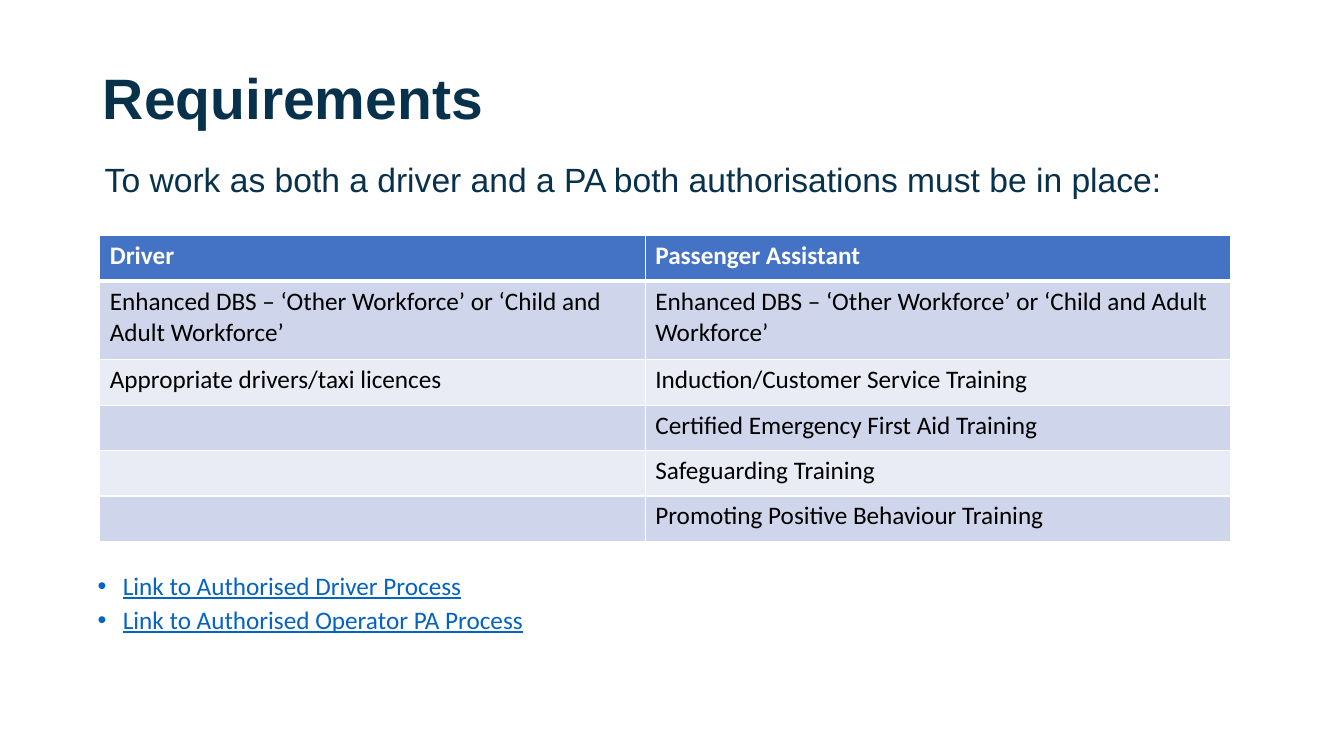
from dataclasses import dataclass

import pptx
import pptx.dml.color
import pptx.enum.text
import pptx.oxml
import pptx.oxml.ns
import pptx.util
from pptx.util import Inches


@dataclass(frozen=True)
class Theme:
    navy: str = "08314C"
    header: str = "4472C4"
    bands: tuple[str, str] = ("CFD5EA", "E9EBF5")
    white: str = "FFFFFF"
    black: str = "000000"
    link: str = "0563C1"
    heading_font: str = "Arial"
    body_font: str = "Calibri"
    title_size: float = 40.7
    lead_size: float = 24
    body_size: float = 18


@dataclass(frozen=True)
class TextStyle:
    font: str
    size: float
    color: str
    bold: bool = False
    underline: bool = False


@dataclass(frozen=True)
class TextBlock:
    left: float
    top: float
    width: float
    height: float
    lines: tuple[str, ...]
    style: TextStyle
    indent: float
    bulleted: bool = False


THEME = Theme()
TITLE = TextStyle(THEME.heading_font, THEME.title_size, THEME.navy, bold=True)
LEAD = TextStyle(THEME.heading_font, THEME.lead_size, THEME.navy)
HEADER = TextStyle(THEME.body_font, THEME.body_size, THEME.white, bold=True)
CELL = TextStyle(THEME.body_font, THEME.body_size, THEME.black)
LINK = TextStyle(THEME.body_font, THEME.body_size, THEME.link, underline=True)

DBS = "Enhanced DBS – ‘Other Workforce’ or ‘Child and Adult Workforce’"
REQUIREMENTS = (
    ("Driver", "Passenger Assistant"),
    (DBS, DBS),
    ("Appropriate drivers/taxi licences", "Induction/Customer Service Training"),
    ("", "Certified Emergency First Aid Training"),
    ("", "Safeguarding Training"),
    ("", "Promoting Positive Behaviour Training"),
)
COLUMN_WIDTHS = (5.41, 5.81)
ROW_HEIGHT = 0.45
DBS_ROW_HEIGHT = 0.78

TEXT_BLOCKS = (
    TextBlock(0.37, 5.64, 11.72, 1.06,
              ("Link to Authorised Driver Process", "Link to Authorised Operator PA Process"),
              LINK, indent=0.75, bulleted=True),
    TextBlock(0.44, 1.57, 11.72, 0.46,
              ("To work as both a driver and a PA both authorisations must be in place:",),
              LEAD, indent=0.5),
)


def rgb(color: str) -> pptx.dml.color.RGBColor:
    return pptx.dml.color.RGBColor.from_string(color)


def style_runs(p, style: TextStyle) -> None:
    for r in p.runs:
        r.font.name = style.font
        r.font.size = pptx.util.Pt(style.size)
        r.font.color.rgb = rgb(style.color)
        r.font.bold = style.bold
        r.font.underline = style.underline


def set_indent(p, indent: float, bulleted: bool) -> None:
    pPr = p._p.get_or_add_pPr()
    pPr.set("marL", str(Inches(indent)))
    pPr.set("indent", str(Inches(-0.25 if bulleted else 0)))
    ns = pptx.oxml.ns.nsdecls("a")
    if bulleted:
        pPr.append(pptx.oxml.parse_xml(f'<a:buFont {ns} typeface="Arial"/>'))
        pPr.append(pptx.oxml.parse_xml(f'<a:buChar {ns} char="•"/>'))


def add_title(s, text: str) -> None:
    sp = s.shapes.title
    sp.left, sp.top, sp.width, sp.height = map(Inches, (0.92, 0.4, 11.5, 1.25))
    tf = sp.text_frame
    tf.text = text
    tf.word_wrap = True
    tf.vertical_anchor = pptx.enum.text.MSO_ANCHOR.MIDDLE
    p = tf.paragraphs[0]
    p.alignment = pptx.enum.text.PP_ALIGN.LEFT
    p.line_spacing = 0.8
    style_runs(p, TITLE)


def add_text_block(s, block: TextBlock) -> None:
    sp = s.shapes.add_textbox(Inches(block.left), Inches(block.top),
                              Inches(block.width), Inches(block.height))
    tf = sp.text_frame
    tf.word_wrap = True
    tf.text = "\n".join(block.lines)
    for i, p in enumerate(tf.paragraphs):
        set_indent(p, block.indent, block.bulleted)
        p.line_spacing = 0.9
        if i:
            p.space_before = pptx.util.Pt(5)
        style_runs(p, block.style)


def set_borders(cell, row: int) -> None:
    # The rule between the header and the body is heavier
    widths = {"L": 1, "R": 1, "T": 3 if row == 1 else 1, "B": 3 if row == 0 else 1}
    tcPr = cell._tc.get_or_add_tcPr()
    for side, width in widths.items():
        tcPr.append(pptx.oxml.parse_xml(
            f'<a:ln{side} {pptx.oxml.ns.nsdecls("a")} w="{pptx.util.Pt(width)}">'
            f'<a:solidFill><a:srgbClr val="{THEME.white}"/></a:solidFill></a:ln{side}>'))


def add_requirements_table(s) -> None:
    heights = [DBS_ROW_HEIGHT if DBS in row else ROW_HEIGHT for row in REQUIREMENTS]
    table = s.shapes.add_table(len(REQUIREMENTS), len(COLUMN_WIDTHS), Inches(0.99), Inches(2.34),
                               Inches(sum(COLUMN_WIDTHS)), Inches(sum(heights))).table
    for column, width in zip(table.columns, COLUMN_WIDTHS):
        column.width = Inches(width)
    for i, texts in enumerate(REQUIREMENTS):
        table.rows[i].height = Inches(heights[i])
        for j, text in enumerate(texts):
            cell = table.cell(i, j)
            set_borders(cell, i)
            cell.fill.solid()
            cell.fill.fore_color.rgb = rgb(THEME.bands[(i - 1) % 2] if i else THEME.header)
            if text:
                cell.text_frame.text = text
                style_runs(cell.text_frame.paragraphs[0], CELL if i else HEADER)


def main() -> None:
    prs = pptx.Presentation()
    prs.slide_width, prs.slide_height = Inches(13.33), Inches(7.5)
    s = prs.slides.add_slide(prs.slide_layouts.get_by_name("Title Only"))

    # Heading, table, then the lead sentence and links
    add_title(s, "Requirements")
    add_requirements_table(s)
    for block in TEXT_BLOCKS:
        add_text_block(s, block)

    prs.save("out.pptx")


if __name__ == "__main__":
    main()
